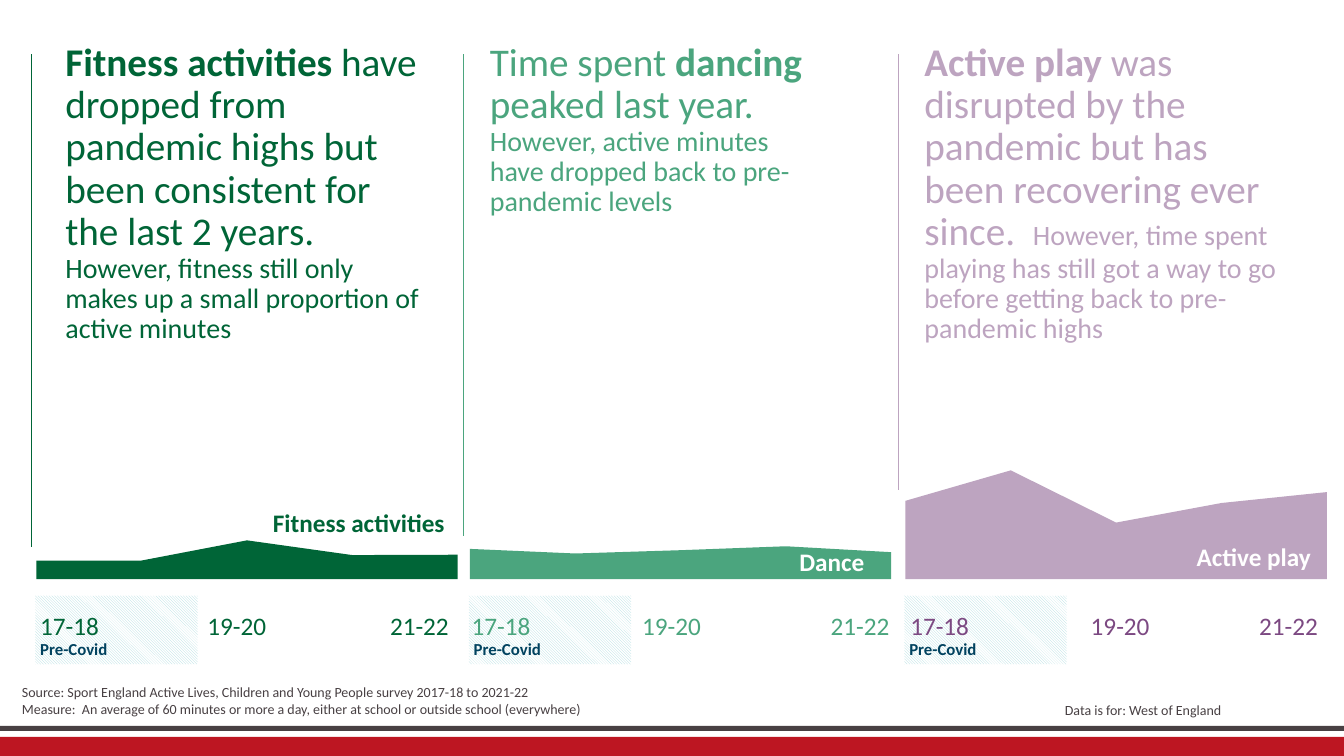
from dataclasses import dataclass

from lxml import etree
from pptx import Presentation
from pptx.chart.data import CategoryChartData
from pptx.dml.color import RGBColor
from pptx.enum.chart import XL_CHART_TYPE
from pptx.enum.dml import MSO_PATTERN
from pptx.enum.shapes import MSO_CONNECTOR, MSO_SHAPE
from pptx.enum.text import PP_ALIGN
from pptx.oxml.ns import qn
from pptx.util import Inches, Pt

AREA_STACKED = XL_CHART_TYPE.AREA_STACKED
HATCH = MSO_PATTERN.LIGHT_DOWNWARD_DIAGONAL
RECTANGLE = MSO_SHAPE.RECTANGLE
STRAIGHT = MSO_CONNECTOR.STRAIGHT
LEFT, RIGHT = PP_ALIGN.LEFT, PP_ALIGN.RIGHT

FONT = "Calibri"
GREY, RED, NAVY, WHITE = "484043", "BD1622", "01425F", "FFFFFF"
DARK_GREEN, GREEN, LILAC, PURPLE = "006537", "4BA57E", "BDA4C0", "7C4982"
HATCH_COLOUR = "ACDBDF"
YEARS = ("17-18", "19-20", "21-22")
PLOT_FRAME = {"x": 0, "y": 0.035, "w": 1, "h": 0.937}


def colour(value):
    return RGBColor.from_string(value)


def style_font(font, size, ink, bold=None):
    font.name = FONT
    font.size = Pt(size)
    font.color.rgb = colour(ink)
    if bold is not None:
        font.bold = bold


@dataclass
class Activity:
    ink: str
    year_ink: str
    chart_left: float
    values: tuple
    axis_max: int
    year_lefts: tuple
    divider: tuple
    message_box: tuple
    message: tuple
    label: str
    label_box: tuple
    label_ink: str
    label_align: int = LEFT


class SlideBuilder:
    def __init__(self, slide):
        self.slide = slide

    def band(self, box, fill, hatched=False):
        band = self.slide.shapes.add_shape(RECTANGLE, *map(Inches, box))
        band.shadow.inherit = False
        band.line.fill.background()
        if hatched:
            band.fill.patterned()
            band.fill.pattern = HATCH
            band.fill.fore_color.rgb = colour(fill)
            band.fill.back_color.rgb = colour(WHITE)
        else:
            band.fill.solid()
            band.fill.fore_color.rgb = colour(fill)

    def frame(self, box):
        frame = self.slide.shapes.add_textbox(*map(Inches, box)).text_frame
        frame.word_wrap = True
        return frame

    def text(self, box, lines, size, ink, bold=False, align=LEFT):
        frame = self.frame(box)
        frame.text = "\n".join(lines)
        for paragraph in frame.paragraphs:
            paragraph.alignment = align
            style_font(paragraph.font, size, ink, bold)

    def message(self, box, parts, ink):
        paragraph = self.frame(box).paragraphs[0]
        paragraph.line_spacing = 0.9
        for words, size, bold in parts:
            run = paragraph.add_run()
            run.text = words
            style_font(run.font, size, ink, bold)

    def divider(self, x, top, bottom, ink):
        divider = self.slide.shapes.add_connector(
            STRAIGHT, Inches(x), Inches(top), Inches(x), Inches(bottom))
        divider.line.color.rgb = colour(ink)
        divider.line.width = Pt(0.75)
        etree.SubElement(divider.element.spPr, qn("a:effectLst"))

    def area_chart(self, box, values, axis_max, ink):
        data = CategoryChartData(number_format="0")
        data.categories = [str(i + 1) for i in range(len(values))]
        data.add_series("Series 1", values)
        chart = self.slide.shapes.add_chart(
            AREA_STACKED, *map(Inches, box), data).chart
        chart.has_legend = False
        chart.has_title = False
        style_font(chart.font, 10, GREY)
        chart.plots[0].vary_by_categories = False
        fill = chart.plots[0].series[0].format.fill
        fill.solid()
        fill.fore_color.rgb = colour(ink)
        for axis in (chart.category_axis, chart.value_axis):
            axis.has_major_gridlines = False
            axis.visible = False
        chart.value_axis.minimum_scale = 0
        chart.value_axis.maximum_scale = axis_max
        self.fix_plot_frame(chart)

    def fix_plot_frame(self, chart):
        plot_area = chart.element.find(".//" + qn("c:plotArea"))
        for layout in plot_area.findall(qn("c:layout")):
            plot_area.remove(layout)
        layout = etree.Element(qn("c:layout"))
        plot_area.insert(0, layout)
        manual = etree.SubElement(layout, qn("c:manualLayout"))
        settings = {"layoutTarget": "inner", "xMode": "edge", "yMode": "edge"}
        for tag, value in {**settings, **PLOT_FRAME}.items():
            etree.SubElement(manual, qn("c:" + tag)).set("val", str(value))

    def activity(self, item):
        left = item.chart_left
        self.band((left - 0.01, 5.91, 1.61, 0.68), HATCH_COLOUR, hatched=True)
        self.text((left - 0.06, 6.29, 1.16, 0.3), ["Pre-Covid"], 12, NAVY, True)
        for year, year_left in zip(YEARS, item.year_lefts):
            self.text((year_left, 6.01, 0.83, 0.4), [year], 18, item.year_ink)
        self.area_chart((left, 0.07, 4.18, 5.84), item.values, item.axis_max, item.ink)
        self.text(item.label_box, [item.label], 18, item.label_ink, True, item.label_align)
        self.divider(*item.divider, item.ink)
        self.message(item.message_box, item.message, item.ink)


ACTIVITIES = (
    Activity(
        DARK_GREEN, DARK_GREEN, 0.36, (48, 48, 100, 62, 63), 1422,
        (0.3, 1.96, 3.77), (0.31, 0.54, 5.43), (0.55, 0.37, 3.74, 3.13),
        (("Fitness activities", 28, True),
         (" have dropped from pandemic highs but been consistent for the last 2 years. ", 28, False),
         ("However, fitness still only makes up a small proportion of active minutes", 20, False)),
        "Fitness activities", (2.48, 4.98, 2.03, 0.4), DARK_GREEN, RIGHT),
    Activity(
        GREEN, GREEN, 4.66, (92, 78, 88, 100, 82), 1677,
        (4.58, 6.27, 8.14), (4.6, 0.54, 5.32), (4.76, 0.37, 3.36, 1.86),
        (("Time spent ", 28, False),
         ("dancing", 28, True),
         (" peaked last year.  ", 28, False),
         ("However, active minutes have dropped back to pre- pandemic levels", 20, False)),
        "Dance", (7.83, 5.37, 0.94, 0.4), WHITE),
    Activity(
        LILAC, PURPLE, 8.98, (72, 100, 52, 70, 80), 507,
        (8.93, 10.72, 12.39), (8.91, 0.54, 4.86), (9.07, 0.37, 3.72, 3.13),
        (("Active play ", 28, True),
         ("was disrupted by the pandemic but has been recovering ever since.  ", 28, False),
         ("However, time spent playing has still got a way to go before getting back to "
          "pre- pandemic highs", 20, False)),
        "Active play", (11.77, 5.32, 1.47, 0.4), WHITE),
)


def main():
    presentation = Presentation()
    presentation.slide_width = Inches(13.33)
    presentation.slide_height = Inches(7.5)
    builder = SlideBuilder(presentation.slides.add_slide(presentation.slide_layouts[6]))
    builder.band((0, 7.31, 13.33, 0.19), RED)
    builder.band((0, 7.2, 13.33, 0.05), GREY)
    for item in ACTIVITIES:
        builder.activity(item)
    builder.text((0.12, 6.73, 6.9, 0.44), [
        "Source: Sport England Active Lives, Children and Young People survey 2017-18 to 2021-22",
        "Measure:  An average of 60 minutes or more a day, either at school or outside school (everywhere)",
    ], 10, GREY)
    builder.text((7.82, 6.91, 4.39, 0.27), ["Data is for: West of England"], 10, GREY, align=RIGHT)
    presentation.save("out.pptx")


if __name__ == "__main__":
    main()
